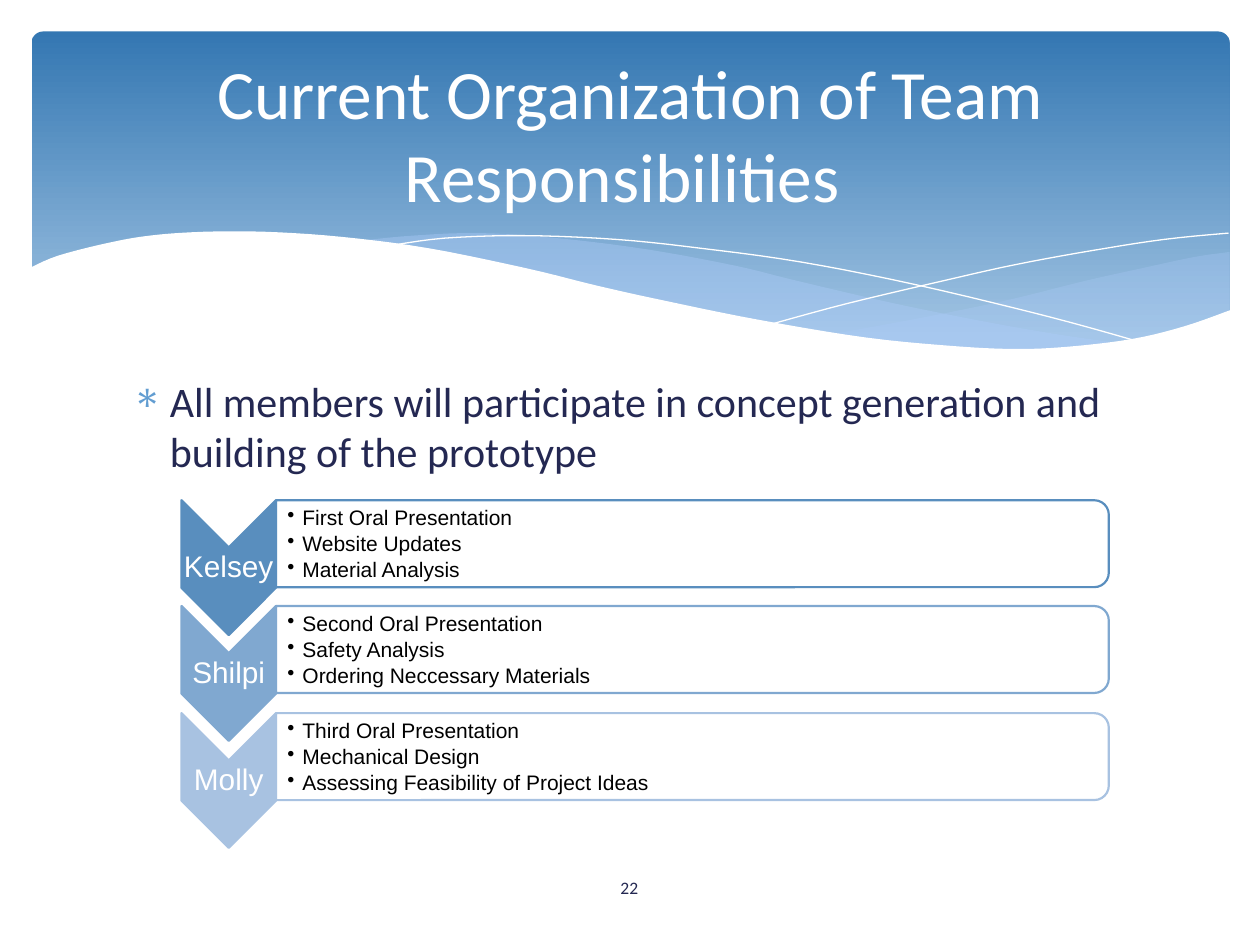
from lxml.etree import SubElement
from pptx import Presentation
from pptx.dml.color import RGBColor
from pptx.enum.shapes import MSO_SHAPE
from pptx.enum.text import MSO_ANCHOR, MSO_AUTO_SIZE, PP_ALIGN
from pptx.oxml.ns import qn
from pptx.util import Pt

PX = 9144  # EMU per px, 100 px to the inch

# Content
TITLE = "Current Organization of Team Responsibilities "
STATEMENT = "All members will participate in concept generation and building of the prototype"
PAGE_NUMBER = "22"

WHITE = RGBColor(0xFF, 0xFF, 0xFF)
BLACK = RGBColor(0, 0, 0)
NAVY = RGBColor(0x24, 0x28, 0x52)
BULLET_BLUE = RGBColor(0x62, 0x9D, 0xD1)
HEADER_TOP = RGBColor(0x34, 0x77, 0xB2)
HEADER_BOTTOM = RGBColor(0xA1, 0xC4, 0xE3)
WAVE_BLUE = RGBColor(0xAC, 0xCB, 0xF9)

MEMBERS = [
    ("Kelsey", RGBColor(0x59, 0x8E, 0xBE),
     ["First Oral Presentation", "Website Updates", "Material Analysis"]),
    ("Shilpi", RGBColor(0x80, 0xA8, 0xD0),
     ["Second Oral Presentation", "Safety Analysis", "Ordering Neccessary Materials"]),
    ("Molly", RGBColor(0xA8, 0xC2, 0xE1),
     ["Third Oral Presentation", "Mechanical Design", "Assessing Feasibility of Project Ideas"]),
]

# Wave edges, as points that a smooth curve passes through
RIGHT_WAVE_TOP = [(661, 265), (706, 257), (753, 248), (805, 237), (861, 223), (906, 213), (948, 204), (976, 200)]
RIGHT_WAVE_BOTTOM = [(976, 247), (949, 257), (913, 267), (872, 274), (814, 278), (757, 276), (705, 271), (661, 265)]
LONG_WAVE_TOP = [(286, 191), (328, 187), (380, 185), (442, 189), (514, 198), (584, 211), (629, 222),
                 (706, 240), (775, 254), (837, 265), (893, 273)]
LONG_WAVE_BOTTOM = [(893, 273), (857, 277), (807, 278), (748, 276), (680, 268), (601, 255), (530, 240),
                    (449, 222), (383, 207), (323, 196), (286, 191)]
FALLING_LINE = [(309, 195), (353, 189), (416, 187), (489, 190), (556, 197), (636, 208), (727, 226),
                (831, 251), (907, 272)]
RISING_LINE = [(613, 257), (672, 241), (748, 223), (806, 210), (866, 199), (924, 190), (975, 185)]
PAGE_EDGE = [(23, 213), (46, 203), (85, 193), (119, 187), (161, 184), (211, 184), (271, 188), (340, 197),
             (418, 213), (475, 227), (529, 239), (603, 254), (688, 268), (761, 275), (809, 277),
             (850, 275), (899, 269), (940, 259), (977, 246)]
PAGE_CORNERS = [(977, 329), (23, 329)]

# Member rows
FIRST_TOP, LAST_TOP = 397, 566
CHEVRON_LEFT, CHEVRON_W, CHEVRON_H = 144, 75, 107
PANEL_LEFT, PANEL_W, PANEL_H = 219, 661, 69


def box(left, top, width, height):
    return [round(length * PX) for length in (left, top, width, height)]


def set_alpha(shape, percent):
    color = shape.fill._xPr.find(qn("a:solidFill"))[0]
    SubElement(color, qn("a:alpha"), val=str(percent * 1000))


def smooth(points, steps=5):
    """Catmull-Rom curve through the points."""
    padded = [points[0], *points, points[-1]]
    curve = [points[0]]
    for p0, p1, p2, p3 in zip(padded, padded[1:], padded[2:], padded[3:]):
        for step in range(1, steps + 1):
            t = step / steps
            curve.append(tuple(
                (2 * b + (c - a) * t + (2 * a - 5 * b + 4 * c - d) * t ** 2
                 + (3 * b - a - 3 * c + d) * t ** 3) / 2
                for a, b, c, d in zip(p0, p1, p2, p3)))
    return curve


def add_outline(slide, points, fill=None, alpha=None):
    """A filled wave, or a white hairline when there is no fill."""
    start, *rest = [(round(x * PX), round(y * PX)) for x, y in points]
    builder = slide.shapes.build_freeform(*start)
    builder.add_line_segments(rest, close=fill is not None)
    outline = builder.convert_to_shape()
    outline.shadow.inherit = False
    if fill is None:
        outline.fill.background()
        outline.line.color.rgb = WHITE
        outline.line.width = 0
        return
    outline.fill.solid()
    outline.fill.fore_color.rgb = fill
    outline.line.fill.background()
    if alpha:
        set_alpha(outline, alpha)


def add_turned(slide, kind, left, top, width, height, fill, line):
    """A shape turned by 90 degrees that covers the given box."""
    shape = slide.shapes.add_shape(
        kind, *box(left + (width - height) / 2, top + (height - width) / 2, height, width))
    shape.rotation = 90
    shape.shadow.inherit = False
    shape.fill.solid()
    shape.fill.fore_color.rgb = fill
    shape.line.color.rgb = line
    shape.line.width = Pt(1.25)
    return shape


def write(frame, lines, size, font, color, align=PP_ALIGN.LEFT, anchor=MSO_ANCHOR.MIDDLE, insets=(10, 5, 10, 5)):
    frame.word_wrap = True
    frame.auto_size = MSO_AUTO_SIZE.NONE
    frame.vertical_anchor = anchor
    frame.margin_left, frame.margin_top, frame.margin_right, frame.margin_bottom = box(*insets)
    frame.text = "\n".join(lines)
    for paragraph in frame.paragraphs:
        paragraph.alignment = align
        paragraph.font.size = Pt(size)
        for run in paragraph.runs:
            run.font.size = Pt(size)
            run.font.name = font
            run.font.color.rgb = color


def add_text(slide, place, *args, **kwargs):
    frame = slide.shapes.add_textbox(*box(*place)).text_frame
    write(frame, *args, **kwargs)
    return frame


def add_bullet(paragraph, char, indent, color=None):
    properties = paragraph._p.get_or_add_pPr()
    properties.set("marL", str(indent * PX))
    properties.set("indent", str(-indent * PX))
    if color is not None:
        SubElement(SubElement(properties, qn("a:buClr")), qn("a:srgbClr"), val=str(color))
    SubElement(properties, qn("a:buChar"), char=char)


def main():
    deck = Presentation()
    deck.slide_width, deck.slide_height = 1000 * PX, 750 * PX
    slide = deck.slides.add_slide(deck.slide_layouts[5])

    # Header band with waves
    header = slide.shapes.add_shape(MSO_SHAPE.ROUNDED_RECTANGLE, *box(25, 25, 951, 270))
    header.adjustments[0] = 0.034
    header.shadow.inherit = False
    header.line.fill.background()
    header.fill.gradient()
    header.fill.gradient_angle = 270
    for stop, color, position in zip(header.fill.gradient_stops, (HEADER_TOP, HEADER_BOTTOM), (0, 0.9)):
        stop.color.rgb = color
        stop.position = position
    add_outline(slide, smooth(RIGHT_WAVE_TOP) + smooth(RIGHT_WAVE_BOTTOM), WAVE_BLUE, 29)
    add_outline(slide, smooth(LONG_WAVE_TOP) + smooth(LONG_WAVE_BOTTOM), WAVE_BLUE, 40)
    add_outline(slide, smooth(FALLING_LINE))
    add_outline(slide, smooth(RISING_LINE))
    add_outline(slide, smooth(PAGE_EDGE) + PAGE_CORNERS, WHITE)

    # Statement
    statement = add_text(slide, (95, 293, 810, 377), [STATEMENT], 24, "Calibri", NAVY, anchor=MSO_ANCHOR.TOP)
    statement.paragraphs[0].space_before = Pt(4.8)
    add_bullet(statement.paragraphs[0], "∗", 30, BULLET_BLUE)

    # Title, brought in front of the header
    title = slide.shapes.title
    title.left, title.top, title.width, title.height = box(50, 37, 900, 137)
    write(title.text_frame, [TITLE], 39.6, "Calibri", WHITE, PP_ALIGN.CENTER)
    slide.shapes._spTree.append(title._element)

    # Member rows
    for row, (name, color, duties) in enumerate(MEMBERS):
        top = FIRST_TOP + (LAST_TOP - FIRST_TOP) * row // (len(MEMBERS) - 1)
        add_turned(slide, MSO_SHAPE.CHEVRON, CHEVRON_LEFT, top, CHEVRON_W, CHEVRON_H, color, color)
        add_text(slide, (CHEVRON_LEFT, top + 38, CHEVRON_W, 32), [name], 17, "Arial", WHITE,
                 PP_ALIGN.CENTER, insets=(1, 1, 1, 1)).paragraphs[0].line_spacing = 0.9
        panel = add_turned(slide, MSO_SHAPE.ROUND_2_SAME_RECTANGLE, PANEL_LEFT, top, PANEL_W, PANEL_H,
                           WHITE, color)
        set_alpha(panel, 90)
        duty_list = add_text(slide, (PANEL_LEFT, top + 4, PANEL_W - 3, PANEL_H - 6), duties, 12, "Arial",
                             BLACK, insets=(9, 1, 1, 1))
        for paragraph in duty_list.paragraphs:
            paragraph.line_spacing = 0.9
            paragraph.space_after = Pt(1.8)
            add_bullet(paragraph, "•", 12)

    # Page number
    add_text(slide, (436, 684, 127, 40), [PAGE_NUMBER], 10, "Calibri", NAVY, PP_ALIGN.CENTER)

    deck.save("out.pptx")


if __name__ == "__main__":
    main()
